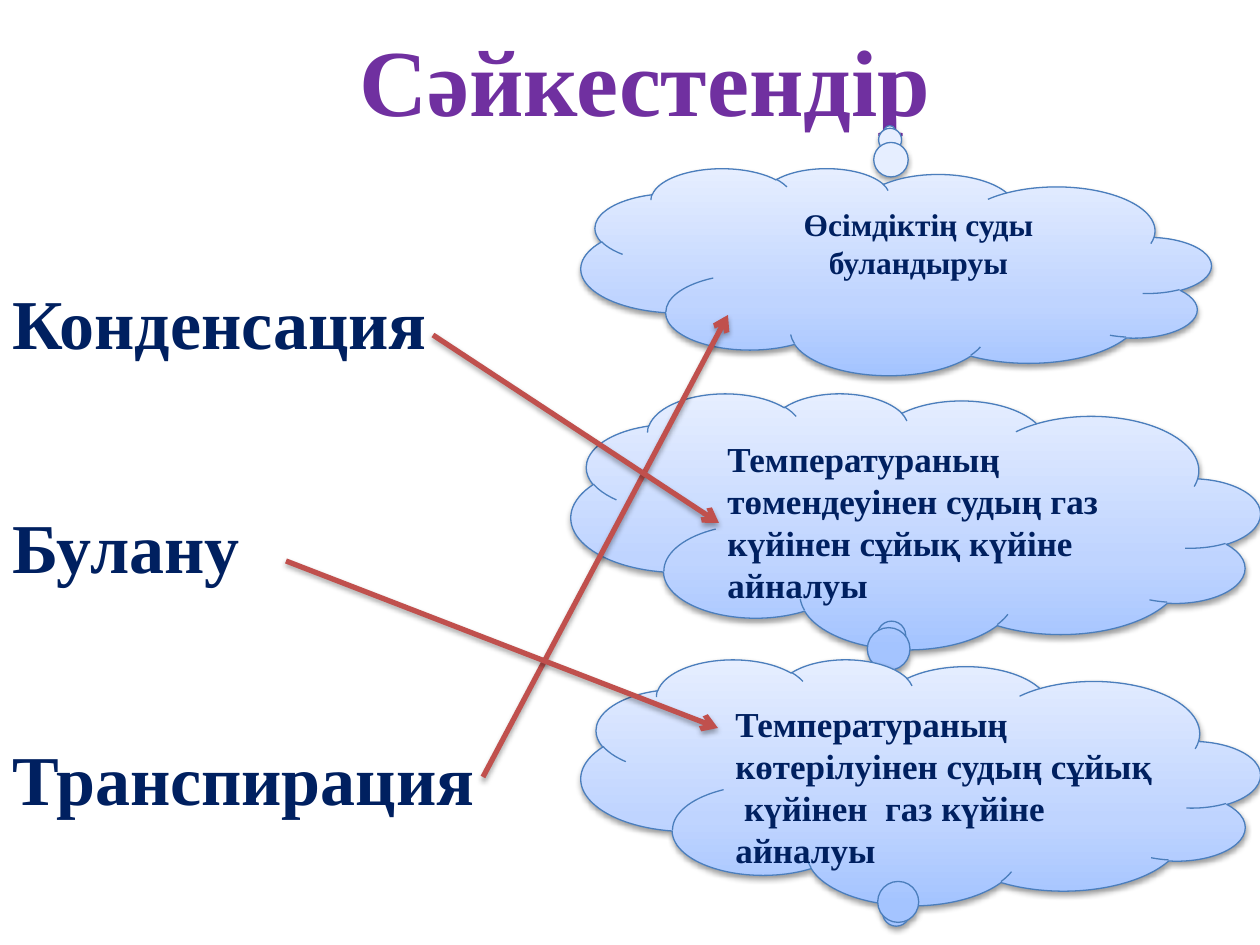
"""Build a matching exercise that links water-cycle terms to their definitions."""
from lxml.etree import SubElement
from pptx import Presentation
from pptx.dml.color import RGBColor
from pptx.enum.shapes import MSO_CONNECTOR as Connector, MSO_SHAPE as Shape
from pptx.enum.text import MSO_ANCHOR as Anchor, PP_ALIGN as Align
from pptx.oxml.ns import qn
from pptx.util import Emu, Pt

EMU_PER_PX = 914400 // 126
NAVY, PURPLE, BLUE, RED = "002060", "7030A0", "4B7EBC", "C0504D"
SKY = [(0, "A4C4FF"), (35, "BFD4FF"), (100, "E6EEFF")]
FONT = "Times New Roman"

TERMS = [("Конденсация", 275, 440), ("Булану", 499, 260), ("Транспирация", 731, 490)]
COOLING = "Температураның төмендеуінен судың газ күйінен сұйық күйіне айналуы"
HEATING = "Температураның  көтерілуінен судың сұйық  күйінен  газ күйіне айналуы"
PLANTS = "Өсімдіктің суды буландыруы"
DEFINITIONS = [
    (COOLING, (571, 393, 689, 256), (0.035, 0.448), 20, Align.LEFT),
    (HEATING, (581, 659, 679, 246), (0.035, 0.519), 20, Align.LEFT),
    (PLANTS, (581, 168, 630, 207), (0.01, -0.677), 18, Align.CENTER),
]
MATCHES = [(483, 777, 728, 315), (433, 335, 719, 523), (286, 561, 718, 728)]


def px(*lengths):
    return [Emu(length * EMU_PER_PX) for length in lengths]


def color(value):
    return RGBColor.from_string(value)


def add_node(parent, tag, **attributes):
    return SubElement(parent, qn(tag), {key: str(value) for key, value in attributes.items()})


def add_shadow(properties, distance, opacity):
    effects = properties.find(qn("a:effectLst"))
    if effects is None:
        effects = add_node(properties, "a:effectLst")
    shadow = add_node(effects, "a:outerShdw", blurRad=40000, dist=distance,
                      dir=5400000, rotWithShape=0)
    black = add_node(shadow, "a:srgbClr", val="000000")
    add_node(black, "a:alpha", val=opacity * 1000)


def write(frame, words, size, ink, align):
    paragraph = frame.paragraphs[0]
    paragraph.text = words
    paragraph.alignment = align
    font = paragraph.font
    font.name, font.size, font.bold = FONT, Pt(size), True
    font.color.rgb = color(ink)


def add_label(slide, words, box, size, ink, align=Align.LEFT, wrap=False):
    frame = slide.shapes.add_textbox(*px(*box)).text_frame
    frame.word_wrap = wrap
    frame.vertical_anchor = Anchor.MIDDLE
    write(frame, words, size, ink, align)


def add_cloud(slide, words, box, tail, size, align):
    cloud = slide.shapes.add_shape(Shape.CLOUD_CALLOUT, *px(*box))
    cloud.adjustments[0], cloud.adjustments[1] = tail
    cloud.rotation = 180
    properties = cloud._element.spPr
    properties.find(qn("a:xfrm")).set("flipV", "1")

    gradient = add_node(properties, "a:gradFill", rotWithShape=1)
    stops = add_node(gradient, "a:gsLst")
    for position, shade in SKY:
        stop = add_node(stops, "a:gs", pos=position * 1000)
        add_node(stop, "a:srgbClr", val=shade)
    add_node(gradient, "a:lin", ang=16200000, scaled=0)

    cloud.line.color.rgb = color(BLUE)
    cloud.line.width = Pt(0.75)
    cloud.shadow.inherit = False
    add_shadow(properties, 20000, 38)
    cloud.text_frame.word_wrap = True
    cloud.text_frame.vertical_anchor = Anchor.TOP
    write(cloud.text_frame, words, size, NAVY, align)


def add_arrow(slide, ends):
    arrow = slide.shapes.add_connector(Connector.STRAIGHT, *px(*ends))
    arrow.line.color.rgb = color(RED)
    arrow.line.width = Pt(3)
    properties = arrow._element.spPr
    add_node(properties.find(qn("a:ln")), "a:tailEnd", type="arrow")
    add_shadow(properties, 23000, 35)


def main():
    deck = Presentation()
    deck.slide_width, deck.slide_height = px(1260, 945)
    slide = deck.slides.add_slide(deck.slide_layouts[6])
    add_label(slide, "Сәйкестендір", (78, 0, 1134, 158), 54, PURPLE, Align.CENTER, True)
    for definition in DEFINITIONS:
        add_cloud(slide, *definition)
    for term, top, width in TERMS:
        add_label(slide, term, (0, top, width, 93), 40, NAVY)
    for ends in MATCHES:
        add_arrow(slide, ends)
    deck.save("out.pptx")


if __name__ == "__main__":
    main()
